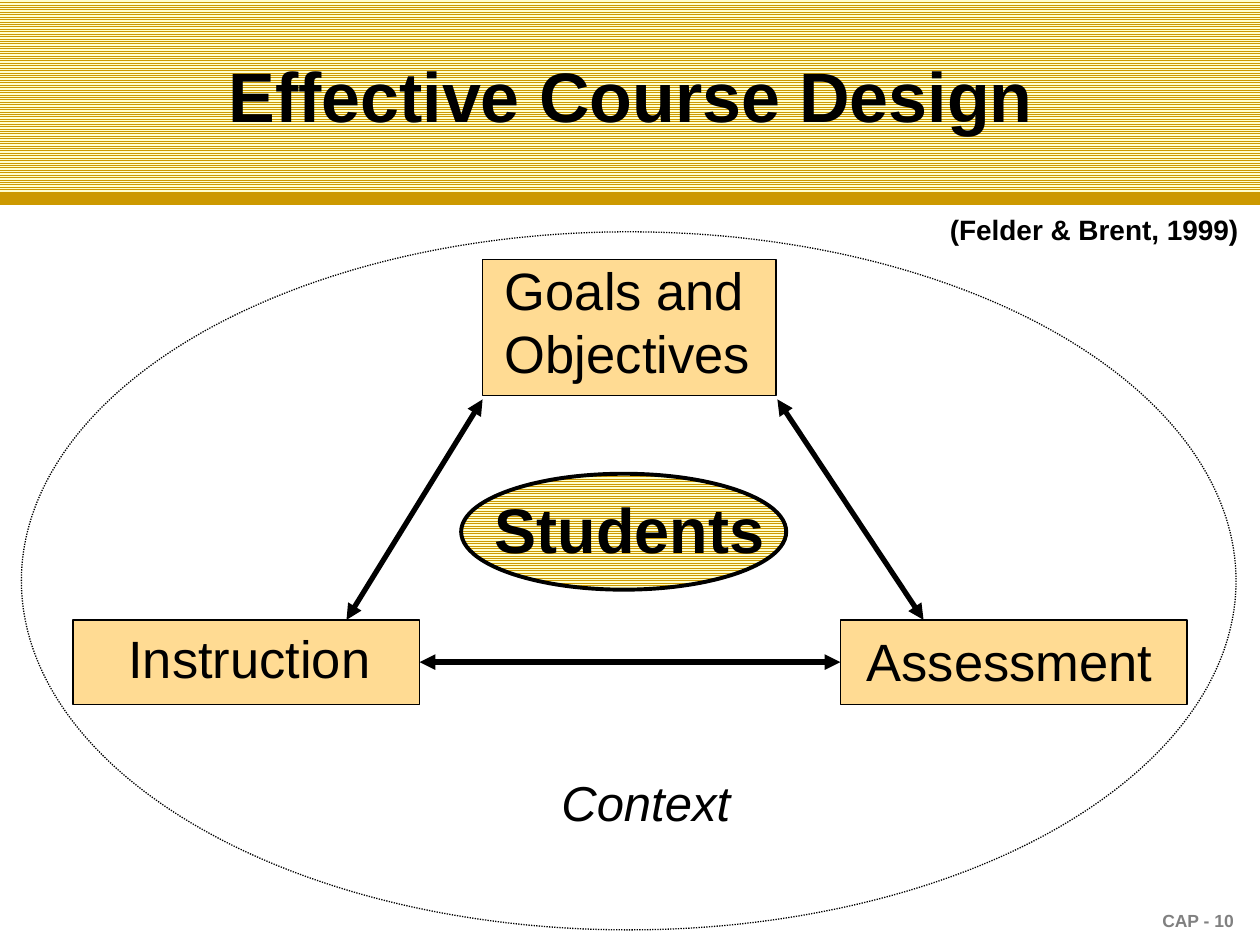
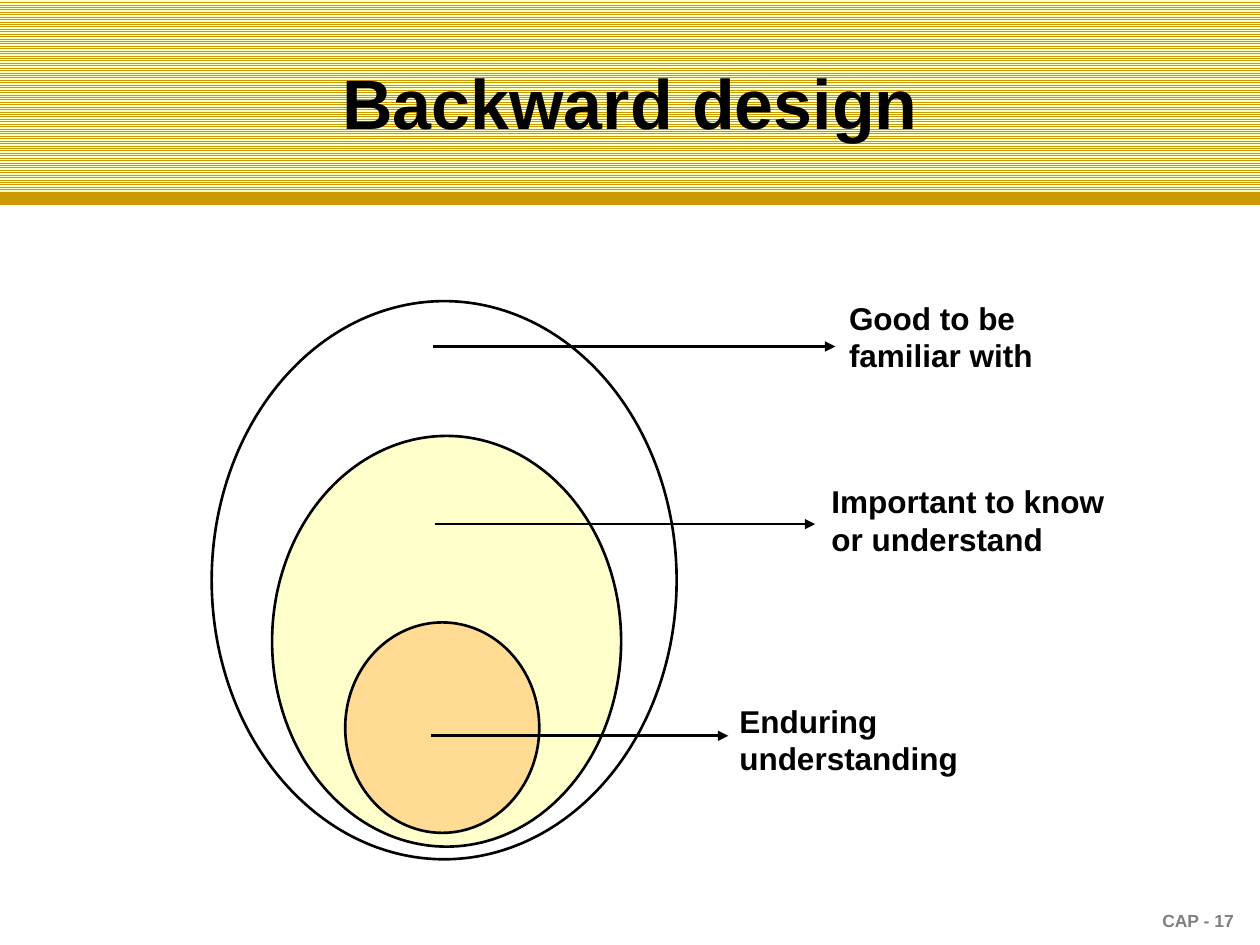
from dataclasses import dataclass

import pptx
import pptx.dml.color
import pptx.enum.dml
import pptx.enum.shapes
import pptx.enum.text
import pptx.oxml
import pptx.oxml.ns
import pptx.util
from pptx.util import Inches

FONT = "Arial"
COLORS = {
    "black": "000000",
    "gray": "808080",
    "gold": "CC9900",
    "cream": "FFFFCC",
    "peach": "FFDB93",
}
SHAPE = pptx.enum.shapes.MSO_SHAPE
ALIGN = pptx.enum.text.PP_ALIGN
DOTTED = pptx.enum.dml.MSO_LINE.ROUND_DOT
STRIPES = "stripes"
LEFT_SIDE, RIGHT_SIDE = 1, 3


@dataclass
class Box:
    x: float
    y: float
    w: float
    h: float

    def lengths(self) -> list:
        return [Inches(v) for v in (self.x, self.y, self.w, self.h)]


@dataclass
class Figure:
    box: Box
    kind: int = SHAPE.OVAL
    fill: str | None = None
    line: float = 0.75
    dash: int | None = None


@dataclass
class Label:
    box: Box
    lines: tuple
    size: float
    color: str = "black"
    bold: bool = False
    italic: bool = False
    align: int = ALIGN.LEFT
    wrap: bool = True


@dataclass
class Arrow:
    start: tuple
    end: tuple
    width: float
    both_ends: bool = False


def rgb(name: str) -> pptx.dml.color.RGBColor:
    return pptx.dml.color.RGBColor.from_string(COLORS[name])


def write(tf, label: Label) -> None:
    tf.word_wrap = label.wrap
    for i, line in enumerate(label.lines):
        p = tf.add_paragraph() if i else tf.paragraphs[0]
        p.alignment = label.align
        r = p.add_run()
        r.text = line
        r.font.name = FONT
        r.font.size = pptx.util.Pt(label.size)
        r.font.bold = label.bold
        r.font.italic = label.italic
        r.font.color.rgb = rgb(label.color)


def add_label(s, label: Label) -> None:
    write(s.shapes.add_textbox(*label.box.lengths()).text_frame, label)


def add_figure(s, figure: Figure):
    sp = s.shapes.add_shape(figure.kind, *figure.box.lengths())
    sp.shadow.inherit = False
    if figure.fill is None:
        sp.fill.background()
    elif figure.fill == STRIPES:
        sp.fill.patterned()
        sp.fill.pattern = pptx.enum.dml.MSO_PATTERN.NARROW_HORIZONTAL
        sp.fill.fore_color.rgb = rgb("gold")
        sp.fill.back_color.rgb = rgb("cream")
    else:
        sp.fill.solid()
        sp.fill.fore_color.rgb = rgb(figure.fill)
    if figure.line:
        sp.line.color.rgb = rgb("black")
        sp.line.width = pptx.util.Pt(figure.line)
        if figure.dash:
            sp.line.dash_style = figure.dash
    else:
        sp.line.fill.background()
    return sp


def add_line(s, start: tuple, end: tuple, width: float, color: str = "black"):
    cxn = s.shapes.add_connector(
        pptx.enum.shapes.MSO_CONNECTOR.STRAIGHT, *map(Inches, start + end))
    cxn.line.color.rgb = rgb(color)
    cxn.line.width = pptx.util.Pt(width)
    props = cxn.element.spPr
    props.append(pptx.oxml.parse_xml(
        f"<a:effectLst {pptx.oxml.ns.nsdecls('a')}/>"))
    return cxn


def add_arrow(s, arrow: Arrow):
    cxn = add_line(s, arrow.start, arrow.end, arrow.width)
    ln = cxn.element.spPr.find(pptx.oxml.ns.qn("a:ln"))
    for tag in ("headEnd", "tailEnd") if arrow.both_ends else ("tailEnd",):
        ln.append(pptx.oxml.parse_xml(
            f"<a:{tag} {pptx.oxml.ns.nsdecls('a')} type='triangle'/>"))
    return cxn


def add_titled_slide(prs, title: str, title_box: Box, page: int):
    """Add a slide with the striped band, its rule, the title and the footer."""
    s = prs.slides.add_slide(prs.slide_layouts[5])
    heading = s.shapes.title
    band = add_figure(s, Figure(Box(0, 0, 10, 1.58), SHAPE.RECTANGLE, STRIPES, 0))
    rule = add_line(s, (0, 1.58), (10, 1.58), 6.5, "gold")
    for sp in (band, rule):
        heading.element.addprevious(sp.element)

    heading.left, heading.top, heading.width, heading.height = title_box.lengths()
    tf = heading.text_frame
    tf.auto_size = pptx.enum.text.MSO_AUTO_SIZE.NONE
    tf.vertical_anchor = pptx.enum.text.MSO_ANCHOR.MIDDLE
    write(tf, Label(title_box, (title,), 40, bold=True, align=ALIGN.CENTER))
    add_label(s, Label(Box(7.56, 7.17, 2.33, 0.18), (f"CAP - {page}",), 10,
                       "gray", bold=True, align=ALIGN.RIGHT))
    return s


def build_course_design(prs) -> None:
    s = add_titled_slide(prs, "Effective Course Design",
                         Box(0.92, 0.25, 8.17, 1), 10)
    goals, assessment, instruction = (
        add_figure(s, Figure(box, SHAPE.RECTANGLE, "peach"))
        for box in (Box(3.83, 2.06, 2.33, 1.08),
                    Box(6.67, 4.92, 2.75, 0.67),
                    Box(0.58, 4.92, 2.75, 0.67)))
    for start, end in (((3.83, 3.17), (2.75, 4.92)),
                       ((6.17, 3.17), (7.33, 4.92))):
        add_arrow(s, Arrow(start, end, 3, both_ends=True))
    base = add_arrow(s, Arrow((3.33, 5.25), (6.67, 5.25), 3, both_ends=True))
    base.begin_connect(instruction, RIGHT_SIDE)
    base.end_connect(assessment, LEFT_SIDE)

    add_figure(s, Figure(Box(0.17, 1.84, 9.64, 5.54), dash=DOTTED))
    add_figure(s, Figure(Box(3.66, 3.76, 2.58, 0.92), fill=STRIPES, line=2.25))
    for label in (
        Label(Box(3.91, 2, 2.24, 1.1), ("Goals and", "Objectives"), 30),
        Label(Box(6.78, 4.94, 2.56, 0.6), ("Assessment",), 30),
        Label(Box(0.92, 4.92, 2.12, 0.6), ("Instruction",), 30, wrap=False),
        Label(Box(7.44, 1.64, 2.52, 0.37), ("(Felder & Brent, 1999)",), 16,
              bold=True, wrap=False),
        Label(Box(3.25, 6.08, 3.75, 0.57), ("Context",), 28,
              italic=True, align=ALIGN.CENTER),
        Label(Box(3.83, 3.84, 2.34, 0.7), ("Students",), 36,
              bold=True, wrap=False),
    ):
        add_label(s, label)


def build_backward_design(prs) -> None:
    s = add_titled_slide(prs, "Backward design", Box(0, 0.18, 10, 1.25), 17)
    for box, fill in ((Box(2.16, 3.46, 2.77, 3.26), "cream"),
                      (Box(2.74, 4.94, 1.54, 1.67), "peach"),
                      (Box(1.68, 2.39, 3.69, 4.43), None)):
        add_figure(s, Figure(box, fill=fill, line=1.5))
    for text, box, start_x, end_x, y in (
        ("Enduring understanding", Box(5.77, 5.52, 2.33, 0.7), 3.42, 5.78, 5.84),
        ("Important to know or understand", Box(6.5, 3.78, 2.49, 0.71),
         3.45, 6.47, 4.16),
        ("Good to be familiar with", Box(6.64, 2.32, 1.84, 0.71),
         3.44, 6.63, 2.75),
    ):
        add_arrow(s, Arrow((start_x, y), (end_x, y), 1.5))
        add_label(s, Label(box, (text,), 18, bold=True))


def main() -> None:
    prs = pptx.Presentation()
    prs.slide_width, prs.slide_height = Inches(10), Inches(7.5)
    build_course_design(prs)
    build_backward_design(prs)
    prs.save("out.pptx")


if __name__ == "__main__":
    main()
